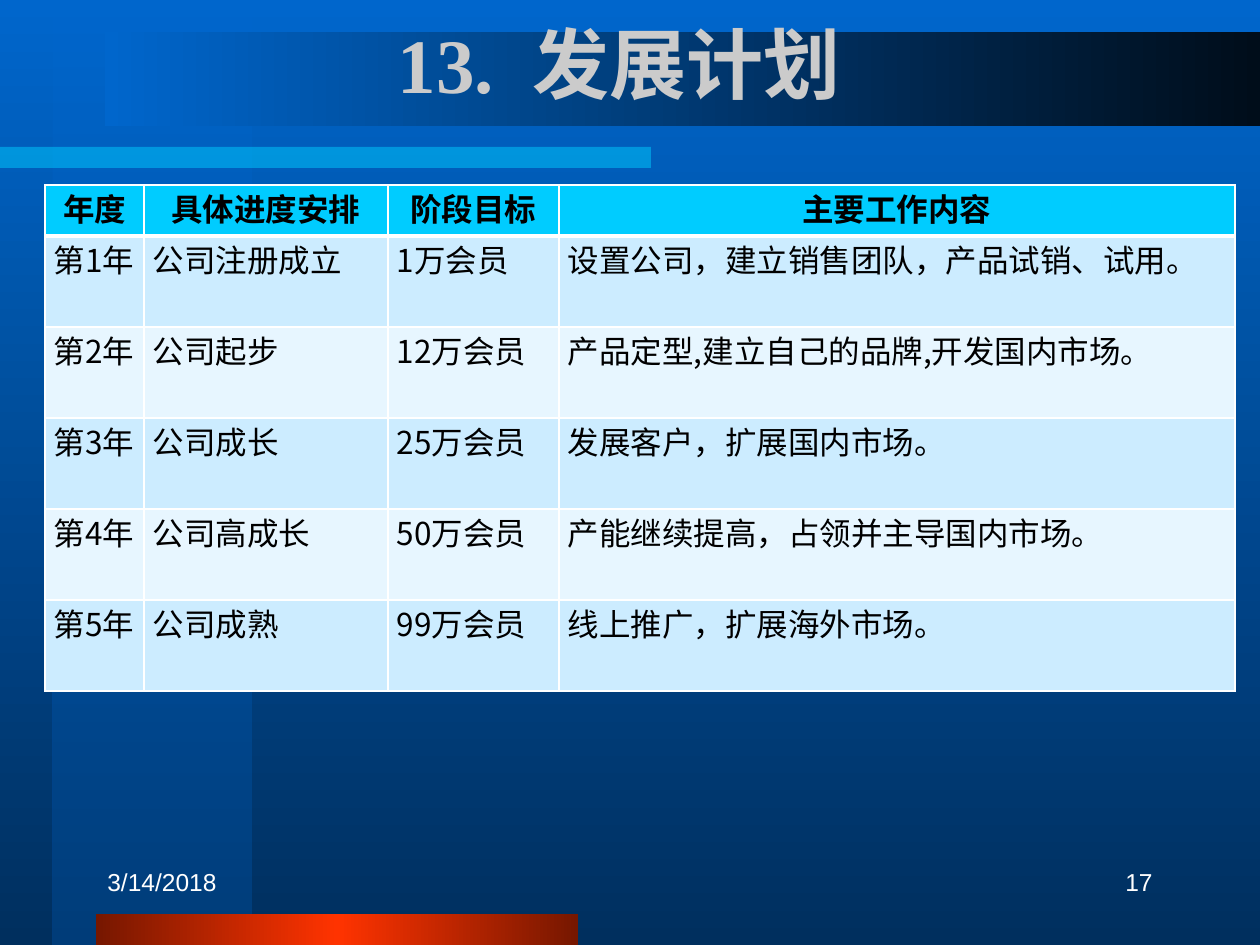
from lxml import etree
from pptx import Presentation
from pptx.dml.color import RGBColor
from pptx.enum.shapes import MSO_SHAPE
from pptx.enum.text import MSO_ANCHOR, PP_ALIGN
from pptx.oxml.ns import qn
from pptx.util import Emu, Pt

EMU_PER_PX = 914400 / 126

BLUE = RGBColor(0x00, 0x66, 0xCC)
NAVY = RGBColor(0x00, 0x2F, 0x5E)
COLUMN_BLUE = RGBColor(0x00, 0x4A, 0x94)
BAR_DARK = RGBColor(0x00, 0x0D, 0x1A)
CYAN = RGBColor(0x00, 0xCC, 0xFF)
RED = RGBColor(0xFF, 0x33, 0x00)
DARK_RED = RGBColor(0x76, 0x17, 0x00)
TITLE_GREY = RGBColor(0xCB, 0xCB, 0xCB)
WHITE = RGBColor(0xFF, 0xFF, 0xFF)
BLACK = RGBColor(0x00, 0x00, 0x00)
ROW_ODD = RGBColor(0xCC, 0xEC, 0xFF)
ROW_EVEN = RGBColor(0xE7, 0xF6, 0xFF)

SERIF = "Times New Roman"
SANS = "Arial"
CJK = "Noto Sans CJK SC"

COLUMN_WIDTHS = (99, 244, 171, 676)
HEADER_HEIGHT = 51
ROW_HEIGHT = 91
HEADERS = ("年度", "具体进度安排", "阶段目标", "主要工作内容")
# Stage, members, and work as (text, font) runs
PLAN = (
    ("公司注册成立", "1万会员", [("设置公司，建立销售团队，产品试销、试用。", SERIF)]),
    ("公司起步", "12万会员", [("产品定型", SERIF), (",建立自己的品牌,开发", CJK),
                          ("国内市场。", SERIF)]),
    ("公司成长", "25万会员", [("发展客户，扩展国内市场。", SERIF)]),
    ("公司高成长", "50万会员", [("产能继续提高，占领并主导国内市场。", SERIF)]),
    ("公司成熟", "99万会员", [("线上推广，扩展海外市场。", SERIF)]),
)


def px(value):
    return Emu(round(value * EMU_PER_PX))


def add_color(parent, color, alpha=100):
    element = etree.SubElement(parent, qn("a:srgbClr"), val=str(color))
    if alpha < 100:
        etree.SubElement(element, qn("a:alpha"), val=str(alpha * 1000))


def set_fill(fill, element, colors, angle=0, alpha=100):
    """Fill with one colour, or with evenly spaced gradient stops."""
    fill.solid()
    fill.fore_color.rgb = colors[0]
    solid = element.find(".//" + qn("a:solidFill"))
    if len(colors) == 1:
        solid.clear()
        add_color(solid, colors[0], alpha)
        return
    gradient = etree.Element(qn("a:gradFill"), rotWithShape="1")
    stops = etree.SubElement(gradient, qn("a:gsLst"))
    for index, color in enumerate(colors):
        position = 100000 * index // (len(colors) - 1)
        add_color(etree.SubElement(stops, qn("a:gs"), pos=str(position)), color, alpha)
    etree.SubElement(gradient, qn("a:lin"), ang=str(angle * 60000), scaled="0")
    solid.getparent().replace(solid, gradient)


def add_band(slide, box, colors, angle=0, alpha=100):
    shape = slide.shapes.add_shape(MSO_SHAPE.RECTANGLE, *map(px, box))
    shape.shadow.inherit = False
    shape.line.fill.background()
    set_fill(shape.fill, shape.element, colors, angle, alpha)


def write_runs(paragraph, runs, size, color, alignment, bold=False):
    paragraph.alignment = alignment
    for text, font_name in runs:
        run = paragraph.add_run()
        run.text = text
        font = run.font
        font.name, font.size, font.bold = font_name, Pt(size), bold
        font.color.rgb = color
        latin = run._r.rPr.find(qn("a:latin"))
        east_asian = etree.Element(qn("a:ea"), typeface=CJK)
        latin.addnext(east_asian)


def add_text(slide, box, text, font_name, size, color, alignment, bold=False):
    text_frame = slide.shapes.add_textbox(*map(px, box)).text_frame
    text_frame.word_wrap = True
    text_frame.vertical_anchor = MSO_ANCHOR.MIDDLE
    write_runs(text_frame.paragraphs[0], [(text, font_name)], size, color, alignment, bold)


def set_borders(cell, top, bottom):
    """White borders; top and bottom widths in points, sides 1 pt."""
    properties = cell._tc.get_or_add_tcPr()
    widths = {"a:lnL": 1, "a:lnR": 1, "a:lnT": top, "a:lnB": bottom}
    for index, (tag, width) in enumerate(widths.items()):
        line = etree.Element(qn(tag), w=str(Pt(width)))
        add_color(etree.SubElement(line, qn("a:solidFill")), WHITE)
        properties.insert(index, line)


def add_plan_table(slide):
    rows = [[[(header, SERIF)] for header in HEADERS]]
    for year, (stage, members, work) in enumerate(PLAN, start=1):
        year_runs = [("第", SANS), (str(year), CJK), ("年", SANS)]
        rows.append([year_runs, [(stage, SERIF)], [(members, CJK)], work])

    box = (45, 185, sum(COLUMN_WIDTHS), HEADER_HEIGHT + ROW_HEIGHT * len(PLAN))
    table = slide.shapes.add_table(len(rows), len(HEADERS), *map(px, box)).table
    for column, width in zip(table.columns, COLUMN_WIDTHS):
        column.width = px(width)
    for row_index, row in enumerate(rows):
        is_header = row_index == 0
        table.rows[row_index].height = px(HEADER_HEIGHT if is_header else ROW_HEIGHT)
        fill = CYAN if is_header else ROW_ODD if row_index % 2 else ROW_EVEN
        alignment = PP_ALIGN.CENTER if is_header else PP_ALIGN.JUSTIFY
        for column_index, runs in enumerate(row):
            cell = table.cell(row_index, column_index)
            cell.margin_left = cell.margin_right = px(9)
            cell.margin_top = cell.margin_bottom = 0
            cell.fill.solid()
            cell.fill.fore_color.rgb = fill
            set_borders(cell, 3 if row_index == 1 else 1, 3 if is_header else 1)
            write_runs(cell.text_frame.paragraphs[0], runs, 18, BLACK, alignment, is_header)


def main():
    presentation = Presentation()
    presentation.slide_width, presentation.slide_height = px(1260), px(945)
    slide = presentation.slides.add_slide(presentation.slide_layouts[6])
    set_fill(slide.background.fill, slide.element, [BLUE, NAVY], angle=90)

    add_band(slide, (53, 0, 199, 945), [BLUE, COLUMN_BLUE], angle=90, alpha=50)
    add_band(slide, (0, 147, 651, 21), [CYAN], alpha=50)
    add_band(slide, (96, 914, 482, 31), [DARK_RED, RED, DARK_RED])
    add_band(slide, (105, 32, 1155, 94), [BLUE, BAR_DARK])

    add_text(slide, (84, 0, 1071, 126), "13.  发展计划", SERIF, 44, TITLE_GREY,
             PP_ALIGN.CENTER, bold=True)
    add_plan_table(slide)
    add_text(slide, (95, 850, 262, 63), "3/14/2018", SANS, 14, WHITE, PP_ALIGN.LEFT)
    add_text(slide, (903, 850, 262, 63), "17", SANS, 14, WHITE, PP_ALIGN.RIGHT)
    presentation.save("out.pptx")


if __name__ == "__main__":
    main()
